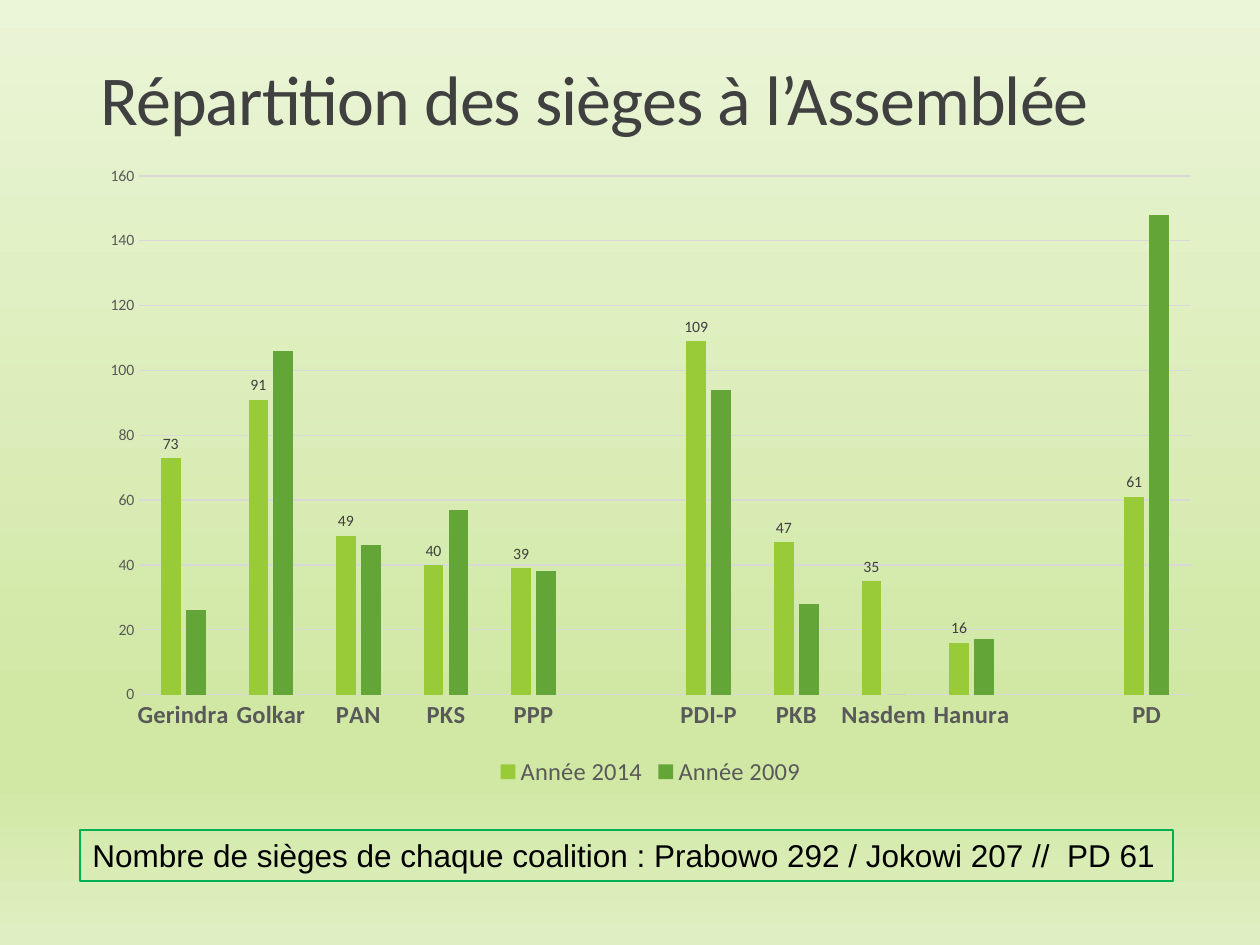
from lxml.etree import SubElement
from pptx import Presentation
from pptx.chart.data import CategoryChartData
from pptx.dml.color import RGBColor
from pptx.enum.chart import (XL_CHART_TYPE, XL_LABEL_POSITION,
                             XL_LEGEND_POSITION, XL_TICK_MARK)
from pptx.enum.shapes import MSO_SHAPE
from pptx.enum.text import MSO_ANCHOR, PP_ALIGN
from pptx.oxml.ns import qn
from pptx.util import Pt

PX = 914400 / 126
THEME = {
    "font": "Calibri", "note font": "Arial",
    "title": "404040", "axis": "595959", "grid": "D9D9D9",
    "ink": "000000", "frame": "00B050", "bars": ["99CB38", "63A537"],
    "back": [(0, "EBF5D7"), (74, "D1E8A5"), (83, "D1E8A5"), (100, "E0EFC3")],
    "title size": 40, "note size": 18, "name size": 14, "small size": 9,
    "line": 0.75,
}


def box(*sides):
    return [round(side * PX) for side in sides]


def style(font, size, color, face=THEME["font"], bold=False):
    font.size = Pt(size)
    font.name = face
    font.bold = bold
    font.color.rgb = RGBColor.from_string(color)


deck = Presentation()
deck.slide_width, deck.slide_height = box(1260, 945)
slide = deck.slides.add_slide(deck.slide_layouts[6])

# Background: vertical gradient with four stops
fill = slide.background.fill
fill.gradient()
fill.gradient_angle = 270
stops = next(slide.element.iter(qn("a:gsLst")))
for stop in list(stops):
    stops.remove(stop)
for place, color in THEME["back"]:
    stop = SubElement(stops, qn("a:gs"), pos=str(place * 1000))
    SubElement(stop, qn("a:srgbClr"), val=color)

# Title
title = slide.shapes.add_textbox(*box(88, 60, 1043, 86))
frame = title.text_frame
frame.word_wrap = True
frame.vertical_anchor = MSO_ANCHOR.BOTTOM
para = frame.paragraphs[0]
para.line_spacing = 0.85
run = para.add_run()
run.text = "Répartition des sièges à l’Assemblée"
style(run.font, THEME["title size"], THEME["title"])
run.font._element.set("spc", "-50")

# Seats by party; empty names part the coalitions
seats = [
    ("Gerindra", 73, 26), ("Golkar", 91, 106), ("PAN", 49, 46),
    ("PKS", 40, 57), ("PPP", 39, 38), ("", None, None),
    ("PDI-P", 109, 94), ("PKB", 47, 28), ("Nasdem", 35, 0),
    ("Hanura", 16, 17), ("", None, None), ("PD", 61, 148),
]
names, new, old = zip(*seats)
data = CategoryChartData()
data.categories = names
data.add_series("Année 2014", new)
data.add_series("Année 2009", old)
chart = slide.shapes.add_chart(
    XL_CHART_TYPE.COLUMN_CLUSTERED, *box(88, 154, 1125, 638), data).chart
style(chart.font, 10, THEME["ink"])
chart.has_title = False

# Bars
plot = chart.plots[0]
plot.gap_width = 219
plot.overlap = -27
plot.vary_by_categories = False
for series, color in zip(plot.series, THEME["bars"]):
    series.format.fill.solid()
    series.format.fill.fore_color.rgb = RGBColor.from_string(color)
    series.invert_if_negative = False
labels = plot.series[0].data_labels
labels.show_value = True
labels.position = XL_LABEL_POSITION.OUTSIDE_END
style(labels.font, THEME["small size"], THEME["title"])

# Axes
party, count = chart.category_axis, chart.value_axis
for axis in (party, count):
    axis.major_tick_mark = axis.minor_tick_mark = XL_TICK_MARK.NONE
style(party.tick_labels.font, THEME["name size"], THEME["axis"], bold=True)
style(count.tick_labels.font, THEME["small size"], THEME["axis"])
count.minimum_scale, count.maximum_scale, count.major_unit = 0, 160, 20
count.format.line.fill.background()
for line in (party.format.line, count.major_gridlines.format.line):
    line.color.rgb = RGBColor.from_string(THEME["grid"])
    line.width = Pt(THEME["line"])

# Legend
chart.has_legend = True
chart.legend.position = XL_LEGEND_POSITION.BOTTOM
chart.legend.include_in_layout = False
style(chart.legend.font, THEME["name size"], THEME["axis"])

# Coalition totals
note = slide.shapes.add_shape(MSO_SHAPE.RECTANGLE, *box(80, 830, 1093, 51))
note.shadow.inherit = False
note.fill.background()
note.line.color.rgb = RGBColor.from_string(THEME["frame"])
note.line.width = Pt(THEME["line"])
frame = note.text_frame
frame.word_wrap = True
frame.vertical_anchor = MSO_ANCHOR.TOP
para = frame.paragraphs[0]
para.alignment = PP_ALIGN.LEFT
run = para.add_run()
run.text = ("Nombre de sièges de chaque coalition : "
            "Prabowo 292 / Jokowi 207 //  PD 61")
style(run.font, THEME["note size"], THEME["ink"], THEME["note font"])

deck.save("out.pptx")
